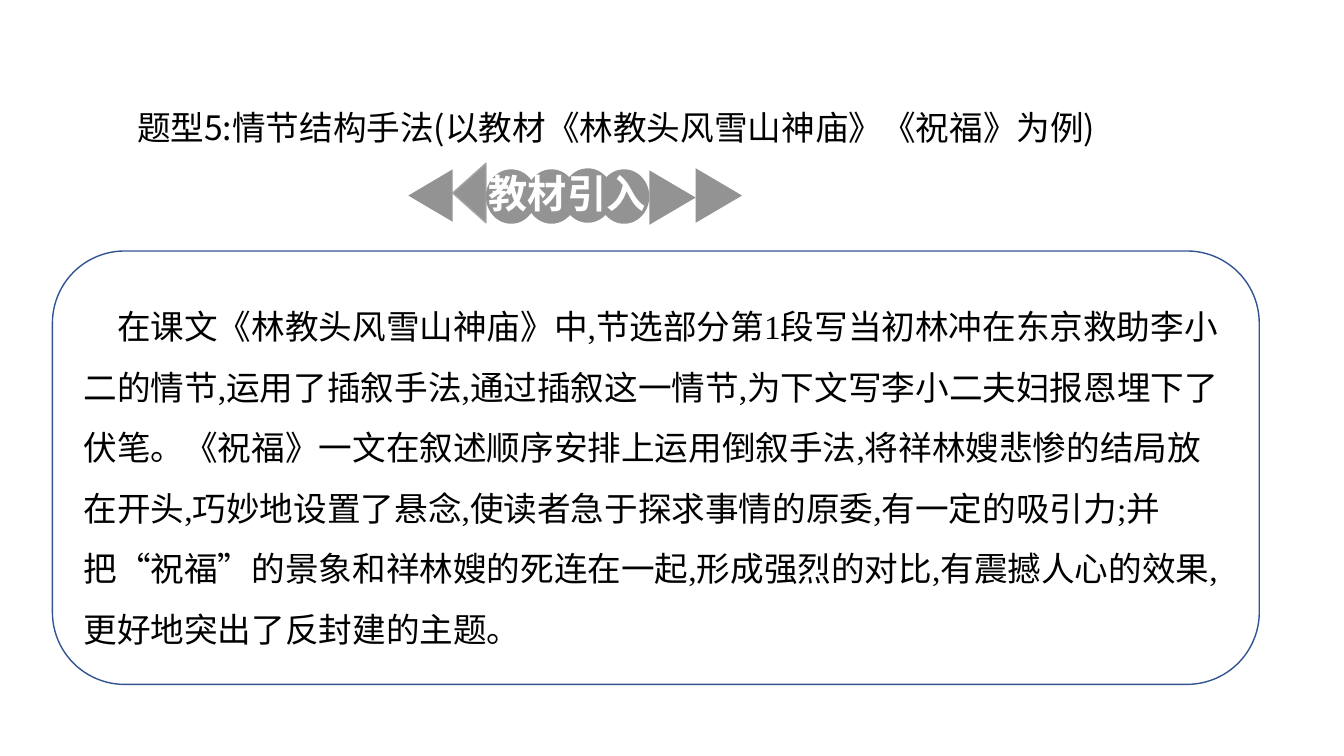
from dataclasses import dataclass

import pptx
import pptx.dml.color
import pptx.enum.lang
import pptx.enum.shapes
import pptx.enum.text
import pptx.oxml
import pptx.oxml.ns
import pptx.util
from pptx.util import Inches

SHAPES = pptx.enum.shapes.MSO_SHAPE
SANS = "Noto Sans CJK SC"
SERIF = "Times New Roman"
GREY = "939393"

TITLE = "题型5:情节结构手法(以教材《林教头风雪山神庙》《祝福》为例)"
BODY = (
    "在课文《林教头风雪山神庙》中,节选部分第1段写当初林冲在东京救助李小二的情节,"
    "运用了插叙手法,通过插叙这一情节,为下文写李小二夫妇报恩埋下了伏笔。"
    "《祝福》一文在叙述顺序安排上运用倒叙手法,将祥林嫂悲惨的结局放在开头,"
    "巧妙地设置了悬念,使读者急于探求事情的原委,有一定的吸引力;"
    "并把“祝福”的景象和祥林嫂的死连在一起,形成强烈的对比,有震撼人心的效果,"
    "更好地突出了反封建的主题。"
)


@dataclass(frozen=True)
class Box:
    left: float
    top: float
    width: float
    height: float

    def lengths(self) -> tuple:
        return tuple(Inches(n) for n in (self.left, self.top, self.width, self.height))


@dataclass(frozen=True)
class Ornament:
    kind: pptx.enum.shapes.MSO_SHAPE
    box: Box
    rotation: int = 0
    line: str | None = None


TRIANGLE = SHAPES.FLOWCHART_EXTRACT
ORNAMENTS = [
    Ornament(TRIANGLE, Box(4.36, 1.75, 0.59, 0.33), 270, "A5A5A5"),
    *(
        Ornament(SHAPES.OVAL, Box(left, top, 0.5, 0.54))
        for left, top in ((4.82, 1.68), (5.22, 1.68), (5.58, 1.67), (5.94, 1.68))
    ),
    Ornament(TRIANGLE, Box(4.01, 1.72, 0.52, 0.44), 270),
    Ornament(TRIANGLE, Box(6.4, 1.73, 0.54, 0.46), 90),
    Ornament(TRIANGLE, Box(6.86, 1.71, 0.54, 0.46), 90),
]


def color(hex_value: str) -> pptx.dml.color.RGBColor:
    return pptx.dml.color.RGBColor.from_string(hex_value)


def add_outline_shape(slide, kind, box: Box, fill: str | None, line: str | None):
    """Add a preset shape; None leaves out its fill or its line."""
    shape = slide.shapes.add_shape(kind, *box.lengths())
    shape.shadow.inherit = False
    if fill:
        shape.fill.solid()
        shape.fill.fore_color.rgb = color(fill)
    else:
        shape.fill.background()
    if line:
        shape.line.color.rgb = color(line)
        shape.line.width = pptx.util.Pt(1)
    else:
        shape.line.fill.background()
    return shape


def write_text(shape, text: str, size: int, latin: str, text_color: str,
               bold: bool = False, wrap: bool = True, spacing: float = 1.0):
    """Fill a shape with one left-aligned paragraph and return the paragraph."""
    frame = shape.text_frame
    frame.text = text
    frame.word_wrap = wrap
    frame.auto_size = pptx.enum.text.MSO_AUTO_SIZE.NONE
    frame.vertical_anchor = pptx.enum.text.MSO_ANCHOR.TOP
    paragraph = frame.paragraphs[0]
    paragraph.alignment = pptx.enum.text.PP_ALIGN.LEFT
    paragraph.line_spacing = spacing
    for run in paragraph.runs:
        font = run.font
        font.size = pptx.util.Pt(size)
        font.bold = bold
        font.color.rgb = color(text_color)
        font.language_id = pptx.enum.lang.MSO_LANGUAGE_ID.SIMPLIFIED_CHINESE
        font.name = latin
        east_asian = pptx.oxml.parse_xml(
            f'<a:ea {pptx.oxml.ns.nsdecls("a")} typeface="{SANS}"/>'
        )
        run._r.get_or_add_rPr().find(pptx.oxml.ns.qn("a:latin")).addnext(east_asian)
    return paragraph


def add_title(slide, box: Box) -> None:
    title = slide.shapes.title
    title.left, title.top, title.width, title.height = box.lengths()
    write_text(title, TITLE, 24, SANS, "000000")


def add_banner(slide) -> None:
    for ornament in ORNAMENTS:
        shape = add_outline_shape(slide, ornament.kind, ornament.box, GREY, ornament.line)
        shape.rotation = ornament.rotation
    label = slide.shapes.add_textbox(*Box(4.75, 1.63, 1.8, 0.57).lengths())
    write_text(label, "教材引入", 28, SANS, "FFFFFF", bold=True, wrap=False)


def add_passage(slide) -> None:
    add_outline_shape(
        slide, SHAPES.ROUNDED_RECTANGLE, Box(0.52, 2.49, 11.97, 4.3), None, "325491"
    )
    passage = slide.shapes.add_textbox(*Box(0.73, 2.79, 11.45, 2.07).lengths())
    paragraph = write_text(passage, BODY, 24, SERIF, "000000", spacing=1.5)
    properties = paragraph._p.get_or_add_pPr()
    properties.set("marL", "0")
    properties.set("indent", str(pptx.util.Pt(24)))


def main() -> None:
    presentation = pptx.Presentation()
    presentation.slide_width = Inches(13.33)
    presentation.slide_height = Inches(7.5)
    slide = presentation.slides.add_slide(presentation.slide_layouts.get_by_name("Title Only"))
    add_title(slide, Box(1.26, 1.01, 10.28, 0.5))
    add_banner(slide)
    add_passage(slide)
    presentation.save("out.pptx")


if __name__ == "__main__":
    main()
